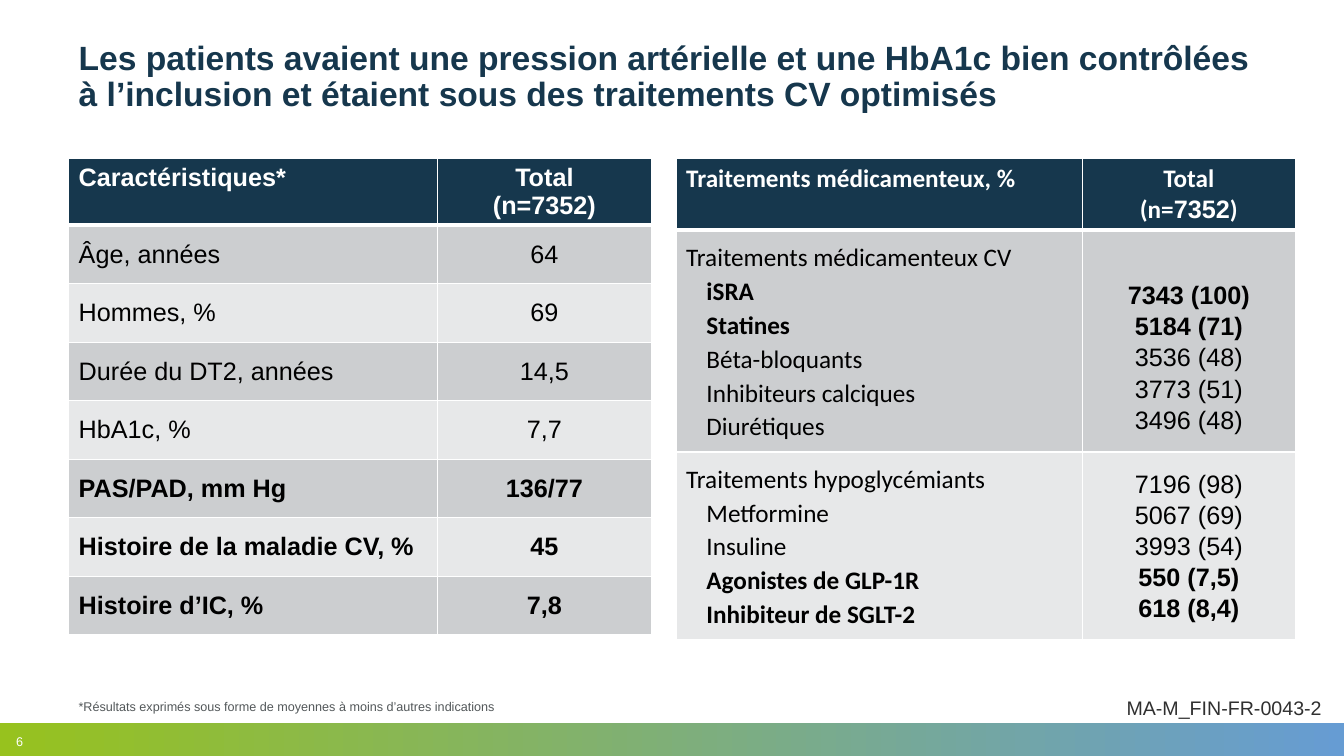
import pptx
import pptx.util
import pptx.dml.color
import pptx.enum.shapes
import pptx.enum.text
import pptx.oxml

Cm, Pt = pptx.util.Cm, pptx.util.Pt
RGB = pptx.dml.color.RGBColor
ALIGN, ANCHOR = pptx.enum.text.PP_ALIGN, pptx.enum.text.MSO_ANCHOR

NAVY = RGB(0x16, 0x37, 0x4D)
WHITE = RGB(0xFF, 0xFF, 0xFF)
BLACK = RGB(0, 0, 0)
DARK = RGB(0xCC, 0xCE, 0xD0)
LIGHT = RGB(0xE7, 0xE8, 0xE9)
GREEN = RGB(0x97, 0xC2, 0x1E)
BLUE = RGB(0x66, 0x9C, 0xD3)
GREY = RGB(0x53, 0x58, 0x5A)
INK = RGB(0x30, 0x30, 0x30)

TITLE = ("Les patients avaient une pression artérielle et une HbA1c bien contrôlées "
         "à l’inclusion et étaient sous des traitements CV optimisés")
NOTE = "*Résultats exprimés sous forme de moyennes à moins d’autres indications"
CODE = "MA-M_FIN-FR-0043-2"
PAGE = "6"

# Label, value, bold
TRAITS = [
    ("Âge, années", "64", False),
    ("Hommes, %", "69", False),
    ("Durée du DT2, années", "14,5", False),
    ("HbA1c, %", "7,7", False),
    ("PAS/PAD, mm Hg", "136/77", True),
    ("Histoire de la maladie CV, %", "45", True),
    ("Histoire d’IC, %", "7,8", True),
]
# Each group: heading row first; an empty value leaves its line free
DRUGS = [
    [("Traitements médicamenteux CV", "", False),
     ("iSRA", "7343 (100)", True),
     ("Statines", "5184 (71)", True),
     ("Béta-bloquants", "3536 (48)", False),
     ("Inhibiteurs calciques", "3773 (51)", False),
     ("Diurétiques", "3496 (48)", False)],
    [("Traitements hypoglycémiants", "7196 (98)", False),
     ("Metformine", "5067 (69)", False),
     ("Insuline", "3993 (54)", False),
     ("Agonistes de GLP-1R", "550 (7,5)", True),
     ("Inhibiteur de SGLT-2", "618 (8,4)", True)],
]

LEFT, TOP, WIDE = Cm(1.73), Cm(3.99), Cm(30.3)
FREE = Cm(0.79)  # height of one free value line
SIDE, EDGE = Cm(0.1), Cm(0.13)


def style(font, size, color, bold=False, name="Arial"):
    font.size, font.bold, font.name = Pt(size), bold, name
    font.color.rgb = color


def rule(cell, tag, width):
    """Draw one white border line of a cell."""
    cell._tc.get_or_add_tcPr().append(pptx.oxml.parse_xml(
        f'<a:{tag} xmlns:a="http://schemas.openxmlformats.org/drawingml/2006/main" '
        f'w="{Pt(width)}"><a:solidFill><a:srgbClr val="FFFFFF"/></a:solidFill></a:{tag}>'))


def grid(slide, left, cols, rows):
    """Add a bordered table with a navy head and alternating grey rows."""
    table = slide.shapes.add_table(len(rows), len(cols), left, TOP,
                                   sum(cols), sum(rows)).table
    for col, width in zip(table.columns, cols):
        col.width = width
    for r, height in enumerate(rows):
        table.rows[r].height = height
        for c in range(len(cols)):
            cell = table.cell(r, c)
            for tag, width in (("lnL", 1), ("lnR", 1), ("lnT", 3 if r == 1 else 1),
                               ("lnB", 3 if r == 0 else 1)):
                rule(cell, tag, width)
            cell.fill.solid()
            cell.fill.fore_color.rgb = NAVY if r == 0 else DARK if r % 2 else LIGHT
            cell.vertical_anchor = ANCHOR.MIDDLE if r else ANCHOR.TOP
            if c:
                cell.margin_left = cell.margin_right = SIDE
                cell.margin_top = cell.margin_bottom = 0 if r else EDGE
    return table


def write(cell, lines, color=BLACK, name="Arial", align=None, space=None, indent=0):
    """Fill a cell with (text, bold) lines; all but the first are indented."""
    cell.text_frame.text = "\n".join(text for text, bold in lines)
    for i, (para, (text, bold)) in enumerate(zip(cell.text_frame.paragraphs, lines)):
        para.alignment, para.line_spacing = align, space
        if i and indent:
            para._p.get_or_add_pPr().set("marL", str(indent))
        for run in para.runs:
            style(run.font, 18, color, bold, name)


def label(slide, text, box, size, color, anchor=ANCHOR.TOP, wrap=True):
    frame = slide.shapes.add_textbox(*box).text_frame
    frame.word_wrap, frame.vertical_anchor = wrap, anchor
    frame.text = text
    style(frame.paragraphs[0].runs[0].font, size, color)
    return frame


def main():
    deck = pptx.Presentation()
    deck.slide_width, deck.slide_height = Cm(33.87), Cm(19.05)
    slide = deck.slides.add_slide(deck.slide_layouts[5])

    bar = slide.shapes.add_shape(pptx.enum.shapes.MSO_SHAPE.RECTANGLE,
                                 0, Cm(18.22), deck.slide_width, Cm(0.83))
    bar.shadow.inherit = False
    bar.line.fill.background()
    bar.fill.gradient()
    bar.fill.gradient_angle = 0
    for stop, color in zip(bar.fill.gradient_stops, (GREEN, BLUE)):
        stop.color.rgb = color

    title = slide.shapes.title
    title.left, title.top, title.width, title.height = LEFT, Cm(0.91), WIDE, Cm(2.67)
    frame = title.text_frame
    frame.text = TITLE
    frame.auto_size = pptx.enum.text.MSO_AUTO_SIZE.NONE
    frame.vertical_anchor = ANCHOR.TOP
    para = frame.paragraphs[0]
    para.alignment, para.line_spacing = ALIGN.LEFT, 0.9
    style(para.runs[0].font, 24, NAVY, True)

    total = [("Total", True), ("(n=7352)", True)]
    table = grid(slide, LEFT, [Cm(9.3), Cm(5.38)], [Cm(1.65)] + [Cm(1.475)] * len(TRAITS))
    write(table.cell(0, 0), [("Caractéristiques*", True)], WHITE)
    write(table.cell(0, 1), total, WHITE, align=ALIGN.CENTER)
    for r, (name, value, bold) in enumerate(TRAITS, 1):
        write(table.cell(r, 0), [(name, bold)])
        write(table.cell(r, 1), [(value, bold)], align=ALIGN.CENTER)

    table = grid(slide, Cm(17.04), [Cm(10.24), Cm(5.36)], [Cm(1.8), Cm(5.59), Cm(4.72)])
    write(table.cell(0, 0), [("Traitements médicamenteux, %", True)], WHITE, "Calibri")
    head = table.cell(0, 1)
    write(head, total[:1] + [("", True)], WHITE, "Calibri", ALIGN.CENTER)
    for text, face in (("(n=", "Calibri"), ("7352", "Arial"), (")", "Calibri")):
        run = head.text_frame.paragraphs[1].add_run()
        run.text = text
        style(run.font, 18, WHITE, True, face)
    for r, group in enumerate(DRUGS, 1):
        write(table.cell(r, 0), [(name, bold) for name, value, bold in group],
              name="Calibri", space=1.1, indent=Cm(0.51))
        values = [(value, bold) for name, value, bold in group if value]
        write(table.cell(r, 1), values, align=ALIGN.CENTER, space=1.1)
        table.cell(r, 1).margin_top = FREE * (len(group) - len(values))

    page = label(slide, PAGE, (Cm(0.41), Cm(18.36), Cm(1.04), Cm(0.64)), 9, WHITE,
                 ANCHOR.BOTTOM)
    page.margin_left = 0
    label(slide, NOTE, (LEFT, Cm(16.71), WIDE, Cm(1.4)), 9, GREY, ANCHOR.BOTTOM)
    label(slide, CODE, (Cm(28.14), Cm(17.4), Cm(5.46), Cm(0.86)), 14, INK, wrap=False)

    deck.save("out.pptx")


if __name__ == "__main__":
    main()
